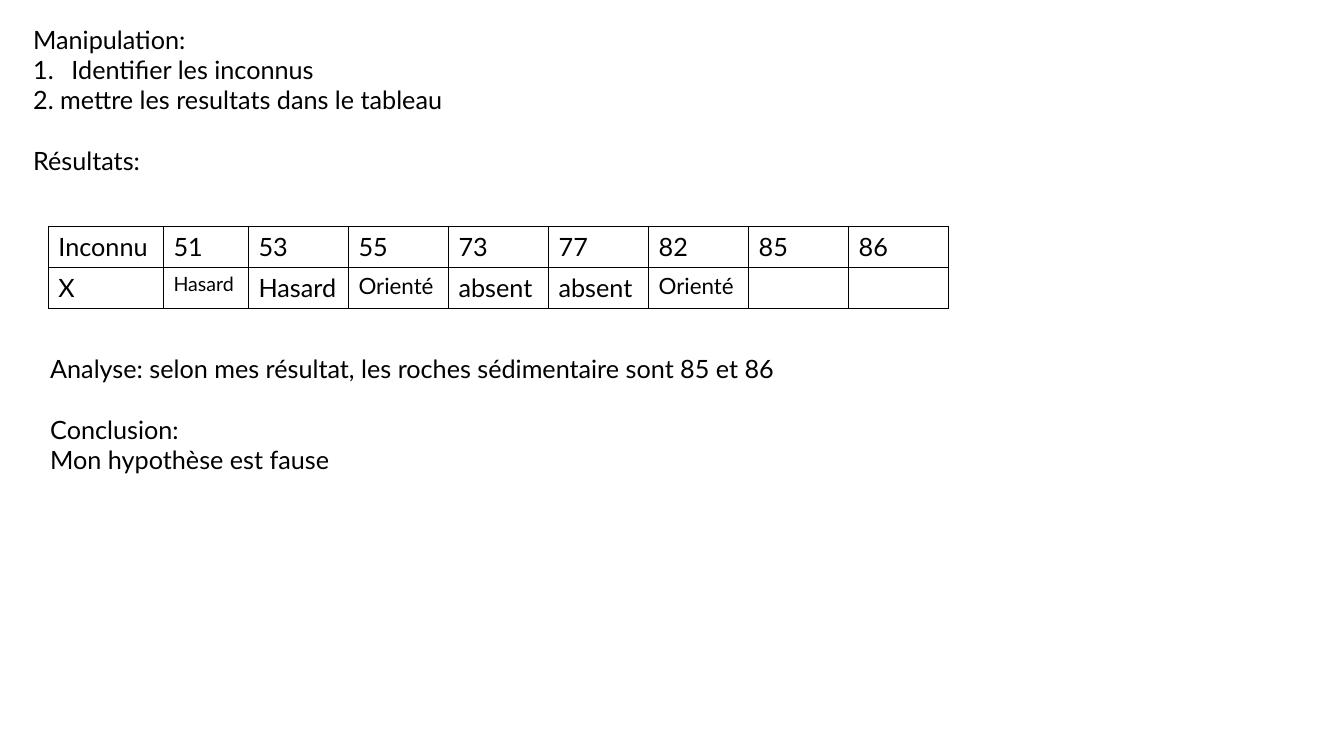
from lxml.etree import SubElement
from pptx import Presentation
from pptx.dml.color import RGBColor
from pptx.enum.text import MSO_AUTO_SIZE
from pptx.oxml import parse_xml
from pptx.oxml.ns import nsdecls, qn
from pptx.util import Inches, Pt

COLORS = {"ink": "000000", "paper": "FFFFFF"}
FONT = "Lato"
BODY_SIZE = 18
LINE_GAP = 21.6  # one text line, in points

SLIDE_WIDTH, SLIDE_HEIGHT = Inches(13.33), Inches(7.5)
COLUMN, ROW = SLIDE_WIDTH / 100, SLIDE_HEIGHT / 100

UNKNOWNS = ["Inconnu", "51", "53", "55", "73", "77", "82", "85", "86"]
FINDINGS = ["X", "Hasard", "Hasard", "Orienté", "absent", "absent", "Orienté", "", ""]
FINDING_SIZES = {1: 14, 3: 16, 6: 16}
COLUMN_SHARES = [1.15, 0.85] + [1] * 7


def grid_box(left, top, width, height):
    """Turn columns and rows of the 100 by 100 grid into slide lengths."""
    return (round(left * COLUMN), round(top * ROW),
            round(width * COLUMN), round(height * ROW))


def style(paragraph, size=BODY_SIZE):
    paragraph.font.name = FONT
    paragraph.font.size = Pt(size)
    paragraph.font.color.rgb = RGBColor.from_string(COLORS["ink"])


def number(paragraph):
    properties = paragraph._p.get_or_add_pPr()
    indent = Inches(0.38)
    properties.set("marL", str(indent))
    properties.set("indent", str(-indent))
    SubElement(properties, qn("a:buAutoNum"), type="arabicPeriod")


def add_notes(slide, box, lines, numbered=(), spaced=()):
    """Write lines; numbered and spaced hold indexes of lines so treated."""
    frame = slide.shapes.add_textbox(*box).text_frame
    frame.word_wrap = True
    frame.auto_size = MSO_AUTO_SIZE.SHAPE_TO_FIT_TEXT
    for index, line in enumerate(lines):
        paragraph = frame.add_paragraph() if index else frame.paragraphs[0]
        paragraph.text = line
        if index in spaced:
            paragraph.space_before = Pt(LINE_GAP)
        if index in numbered:
            number(paragraph)
        style(paragraph)


def outline(cell):
    properties = cell._tc.get_or_add_tcPr()
    for position, side in enumerate(("lnL", "lnR", "lnT", "lnB")):
        properties.insert(position, parse_xml(
            f'<a:{side} {nsdecls("a")} w="{Pt(1)}"><a:solidFill>'
            f'<a:srgbClr val="{COLORS["ink"]}"/></a:solidFill></a:{side}>'))


def fill_cell(cell, text, size):
    cell.fill.background()
    outline(cell)
    cell.text = text
    style(cell.text_frame.paragraphs[0], size)


def add_results(slide, box):
    left, top, width, height = box
    table = slide.shapes.add_table(2, len(UNKNOWNS), *box).table
    table.first_row = table.horz_banding = False
    for row in table.rows:
        row.height = round(height / 2)
    for index, share in enumerate(COLUMN_SHARES):
        table.columns[index].width = round(width * share / sum(COLUMN_SHARES))
        fill_cell(table.cell(0, index), UNKNOWNS[index], BODY_SIZE)
        fill_cell(table.cell(1, index), FINDINGS[index],
                  FINDING_SIZES.get(index, BODY_SIZE))


def main():
    deck = Presentation()
    deck.slide_width, deck.slide_height = SLIDE_WIDTH, SLIDE_HEIGHT
    slide = deck.slides.add_slide(deck.slide_layouts[6])
    slide.background.fill.solid()
    slide.background.fill.fore_color.rgb = RGBColor.from_string(COLORS["paper"])

    add_notes(slide, grid_box(1.73, 2.53, 96.4, 25.6),
              ["Manipulation:", "Identifier les inconnus",
               "2. mettre les resultats dans le tableau", "Résultats:"],
              numbered=[1], spaced=[3])
    add_results(slide, grid_box(3.6, 30, 67, 10.8))
    add_notes(slide, grid_box(3, 46.13, 88.6, 17.47),
              ["Analyse: selon mes résultat, les roches sédimentaire sont 85 et 86",
               "Conclusion:", "Mon hypothèse est fause"],
              spaced=[1])
    deck.save("out.pptx")


if __name__ == "__main__":
    main()
